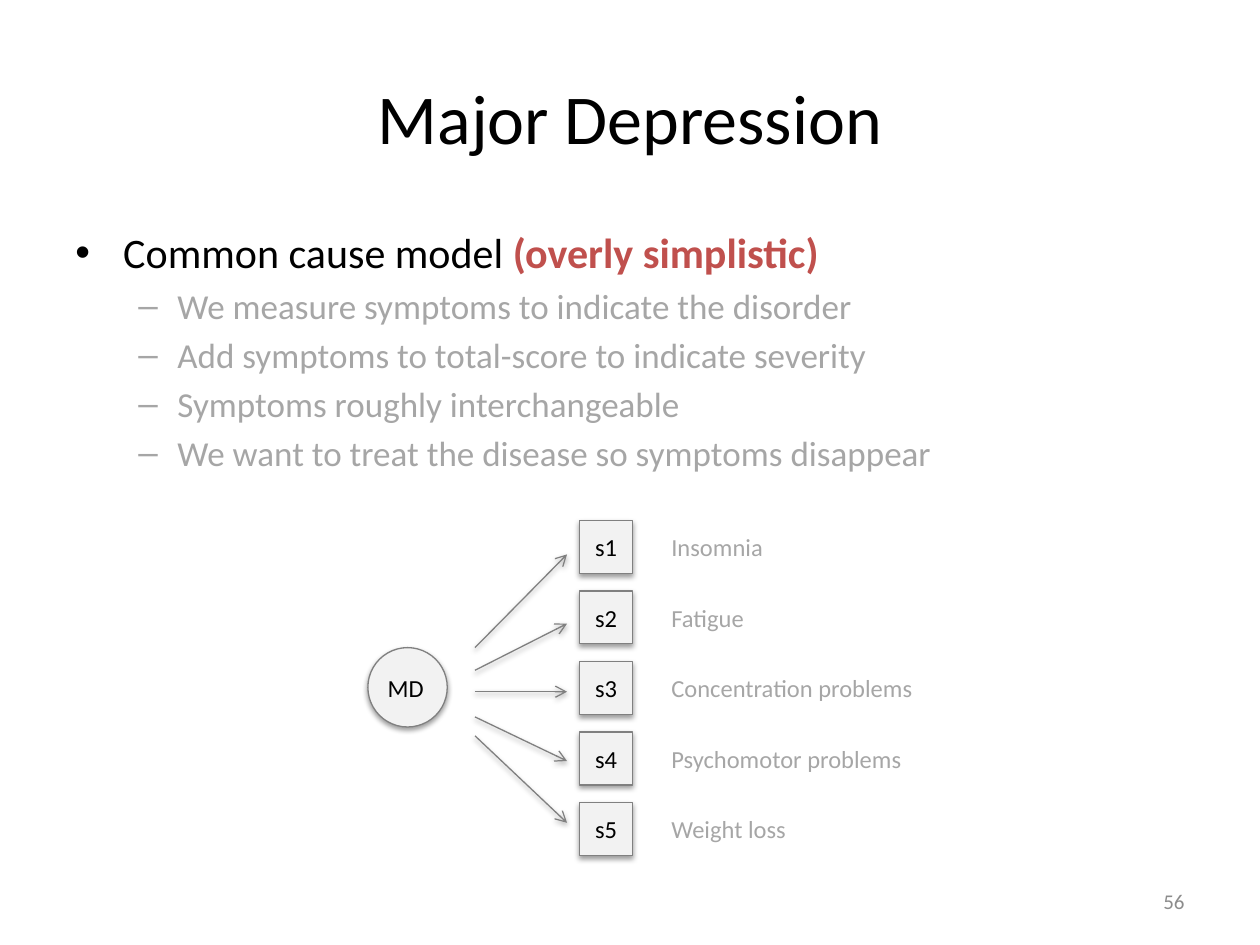
from lxml.etree import SubElement
from pptx import Presentation
from pptx.dml.color import RGBColor
from pptx.enum.shapes import MSO_CONNECTOR as Link, MSO_SHAPE as Preset
from pptx.enum.text import MSO_ANCHOR as Anchor, PP_ALIGN as Align
from pptx.oxml.ns import qn
from pptx.util import Inches, Pt

BLACK, GREY, RED = "000000", "A6A6A6", "C0504D"
PALE, EDGE, WHITE, NUMBER = "F2F2F2", "808080", "FFFFFF", "8C8C8C"
color = RGBColor.from_string

# Grid of the diagram, in inches
TOP, ROW, SIDE = 4.13, 0.56, 0.42
BOX_LEFT, LABEL_LEFT, LABEL_WIDTH = 4.6, 5.23, 2.63


def write(para, text, size, hex_color, bold=False):
    span = para.add_run()
    span.text = text
    span.font.name, span.font.size, span.font.bold = "Calibri", Pt(size), bold
    span.font.color.rgb = color(hex_color)


def drop_shadow(shape):
    properties = shape._element.spPr
    effects = properties.find(qn("a:effectLst"))
    if effects is None:
        effects = SubElement(properties, qn("a:effectLst"))
    shadow = SubElement(effects, qn("a:outerShdw"), blurRad=str(Pt(3.1)),
                        dist=str(Pt(1.6)), dir="5400000", rotWithShape="0")
    tint = SubElement(shadow, qn("a:srgbClr"), val=BLACK)
    SubElement(tint, qn("a:alpha"), val="38000")


deck = Presentation()
deck.slide_width, deck.slide_height = Inches(10), Inches(7.5)
page = deck.slides.add_slide(deck.slide_layouts[6])

# Bullet list: level, then runs of text, size, colour, bold
bullets = [(0, [("Common cause model ", 24, BLACK, False),
                ("(overly simplistic)", 24, RED, True)])]
bullets += [(1, [(text, 20, GREY, False)]) for text in (
    "We measure symptoms to indicate the disorder",
    "Add symptoms to total-score to indicate severity",
    "Symptoms roughly interchangeable",
    "We want to treat the disease so symptoms disappear")]
levels = [("•", 0.38, 0.38), ("–", 0.81, 0.31)]

body = page.shapes.add_textbox(Inches(0.5), Inches(1.75), Inches(9), Inches(4.95))
body.text_frame.word_wrap = True
for index, (level, runs) in enumerate(bullets):
    para = body.text_frame.add_paragraph() if index else body.text_frame.paragraphs[0]
    para.level = level
    mark, margin, hanging = levels[level]
    properties = para._p.get_or_add_pPr()
    properties.set("marL", str(Inches(margin)))
    properties.set("indent", str(-Inches(hanging)))
    if index:
        para.space_before = Pt(4)
    SubElement(properties, qn("a:buFont"), typeface="Arial")
    SubElement(properties, qn("a:buChar"), char=mark)
    for run in runs:
        write(para, *run)

# Title and page number
for text, place, size, hex_color, align in (
        ("Major Depression", (0.5, 0.3, 9, 1.25), 40, BLACK, Align.CENTER),
        ("56", (7.17, 6.95, 2.33, 0.4), 12, NUMBER, Align.RIGHT)):
    box = page.shapes.add_textbox(*map(Inches, place))
    box.text_frame.word_wrap = True
    box.text_frame.vertical_anchor = Anchor.MIDDLE
    para = box.text_frame.paragraphs[0]
    para.alignment = align
    write(para, text, size, hex_color)

# Symptom boxes, the disorder's circle with its caption, and symptom labels
symptoms = ["Insomnia", "Fatigue", "Concentration problems",
            "Psychomotor problems", "Weight loss"]
rows = [TOP + ROW * index for index in range(len(symptoms))]
nodes = [(Preset.RECTANGLE, (BOX_LEFT, top, SIDE, SIDE), f"s{number}", PALE)
         for number, top in enumerate(rows, 1)]
nodes += [(Preset.OVAL, (2.92, 5.14, 0.63, 0.63), "", PALE),
          (Preset.OVAL, (2.54, 4.78, 1.36, 1.36), "MD", None)]
nodes += [(Preset.RECTANGLE, (LABEL_LEFT, top, LABEL_WIDTH, SIDE), text, WHITE)
          for top, text in zip(rows, symptoms)]
for preset, place, text, fill in nodes:
    shape = page.shapes.add_shape(preset, *map(Inches, place))
    shape.shadow.inherit = False
    if fill:
        shape.fill.solid()
        shape.fill.fore_color.rgb = color(fill)
        shape.line.color.rgb = color(EDGE if fill == PALE else WHITE)
        shape.line.width = Pt(0.75 if fill == PALE else 1.5)
    else:
        shape.fill.background()
        shape.line.fill.background()
    if fill == PALE:
        drop_shadow(shape)
    if text:
        frame = shape.text_frame
        frame.word_wrap = fill == WHITE
        frame.vertical_anchor = Anchor.MIDDLE
        para = frame.paragraphs[0]
        para.alignment = Align.LEFT if fill == WHITE else Align.CENTER
        write(para, text, 14, GREY if fill == WHITE else BLACK)

# Arrows fanning out from the disorder to the symptoms
for start_y, end_y in ((5.14, 4.4), (5.32, 4.95), (5.49, 5.49), (5.69, 6.04), (5.84, 6.53)):
    arrow = page.shapes.add_connector(
        Link.STRAIGHT, *map(Inches, (3.77, start_y, 4.5, end_y)))
    arrow.line.color.rgb = color(EDGE)
    arrow.line.width = Pt(0.75)
    SubElement(arrow.line._get_or_add_ln(), qn("a:tailEnd"), type="arrow")
    drop_shadow(arrow)

deck.save("out.pptx")
